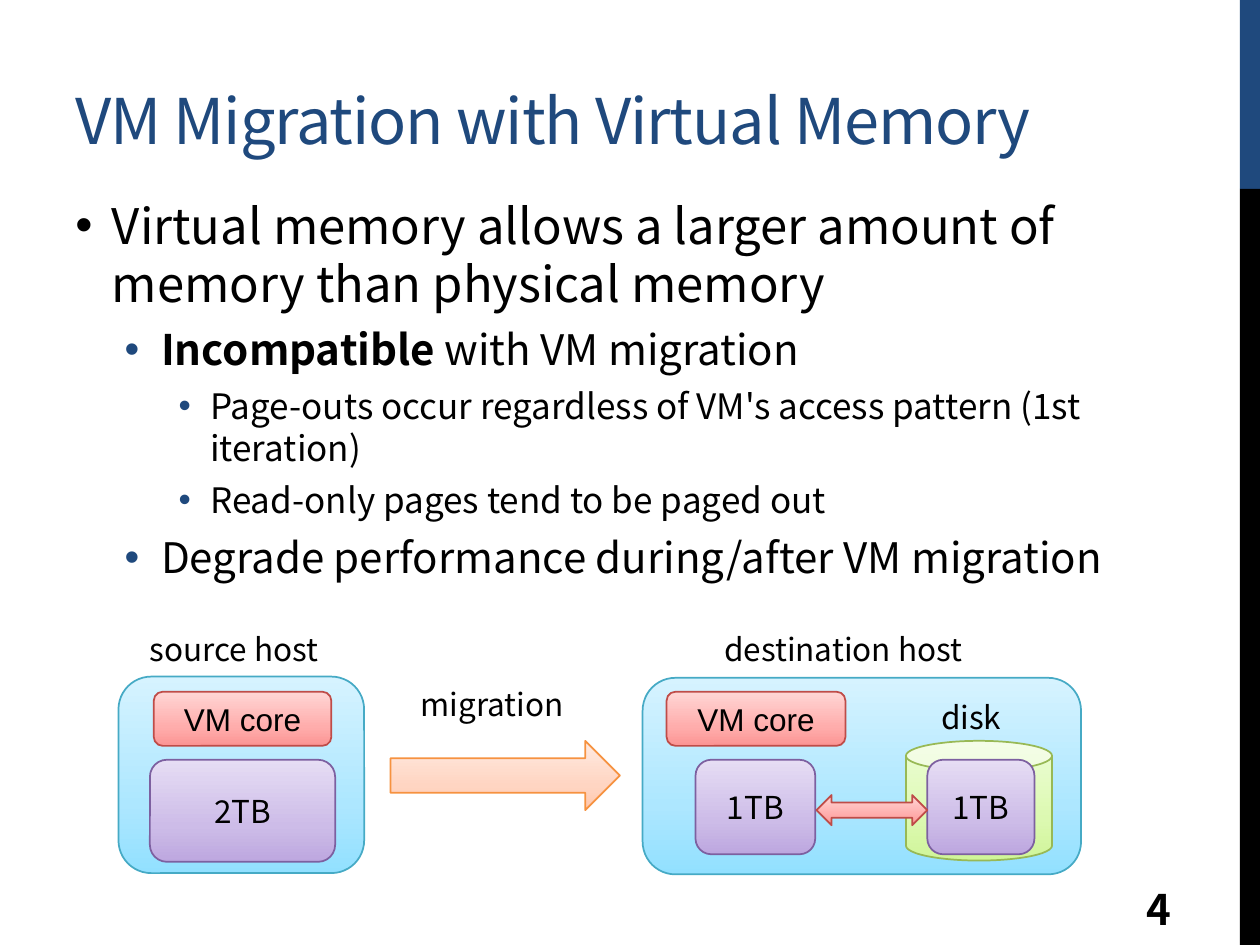
from copy import deepcopy

from pptx import Presentation
from pptx.dml.color import RGBColor
from pptx.enum.shapes import MSO_SHAPE as Shape
from pptx.enum.text import MSO_ANCHOR as Anchor, PP_ALIGN as Align
from pptx.util import Inches, Pt
from lxml.etree import SubElement
from pptx.oxml.ns import qn

# Content: (level, runs), each run being (text, bold)
TITLE = "VM Migration with Virtual Memory"
PAGE_NUMBER = "4"
BULLETS = [
    (0, [("Virtual memory allows a larger amount of memory than physical memory", False)]),
    (1, [("Incompatible", True), (" with VM migration", False)]),
    (2, [("Page-outs occur regardless of VM's access pattern (1st iteration)", False)]),
    (2, [("Read-only pages tend to be paged out", False)]),
    (1, [("Degrade performance during/after VM migration", False)]),
]

# Grid: 100 columns by 75 rows; boxes are (column, row, columns, rows)
SLIDE_WIDTH, SLIDE_HEIGHT = Inches(10), Inches(7.5)
COLUMNS, ROWS = 100, 75
STRIPES = [("navy", 0, 15), ("black", 15, 60)]
TITLE_BOX = (5, 3.6, 89.1, 9.4)
BODY_BOX = (5, 15, 89.1, 52)
NUMBER_BOX = (90, 70.1, 8.5, 4)
CORE_ROW, CORE_ROWS = 54.9, 4.3
MEMORY_ROW, MEMORY_ROWS = 60.3, 7.5

# Diagram, back to front: (kind, palette, text, box)
DIAGRAM = [
    (Shape.ROUNDED_RECTANGLE, "host", "", (9.4, 53.7, 19.5, 15.6)),
    (Shape.ROUNDED_RECTANGLE, "host", "", (51, 53.8, 34.8, 15.6)),
    (Shape.RIGHT_ARROW, "migration", "", (31, 58.8, 18.2, 5.5)),
    (Shape.ROUNDED_RECTANGLE, "memory", "2TB", (11.9, MEMORY_ROW, 14.7, 8.1)),
    (Shape.ROUNDED_RECTANGLE, "memory", "1TB", (55.2, MEMORY_ROW, 9.5, MEMORY_ROWS)),
    (Shape.CAN, "disk", "", (71.9, 58.8, 11.6, 9.5)),
    (Shape.ROUNDED_RECTANGLE, "memory", "1TB", (73.6, MEMORY_ROW, 8.5, MEMORY_ROWS)),
    (Shape.ROUNDED_RECTANGLE, "core", "VM core", (12.2, CORE_ROW, 14.1, CORE_ROWS)),
    (Shape.ROUNDED_RECTANGLE, "core", "VM core", (52.9, CORE_ROW, 14.2, CORE_ROWS)),
    (Shape.LEFT_RIGHT_ARROW, "core", "", (64.8, 63.1, 8.8, 2.4)),
]
LABELS = [
    ("migration", (32.4, 53.9, 13.7, 4)),
    ("source host", (10.9, 49.5, 16.3, 4)),
    ("destination host", (56.5, 49.5, 21.7, 4)),
    ("disk", (73.7, 54.9, 6.8, 4)),
]

THEME = {
    "font": "Noto Sans CJK JP",
    "core_font": "Arial",
    "colors": {"navy": "1F497D", "black": "000000"},
    "sizes": {"title": 36, "levels": [28, 24, 20], "number": 24, "label": 18},
    "indents": [(0.29, 0.29), (0.68, 0.29), (1.07, 0.25)],  # margin, hanging
    "bullet_colors": ["black", "navy", "navy"],
    "stops": [0, 0.35, 1],
    "palettes": {  # line, then gradient from bottom to top
        "host": ("46AAC5", ["92E0FF", "ADE7FF", "D6F3FF"]),
        "migration": ("F69240", ["FFC7AC", "FFD5C2", "FFEAE1"]),
        "memory": ("7D60A0", ["BDA7DF", "CDBCE8", "E6DDF4"]),
        "disk": ("98B955", ["D0F599", "DCF9B1", "EDFDD7"]),
        "core": ("BF4C48", ["FB9493", "FFADAC", "FFD6D5"]),
    },
}


def place(box):
    column, row, columns, rows = box
    return [int(SLIDE_WIDTH * column / COLUMNS), int(SLIDE_HEIGHT * row / ROWS),
            int(SLIDE_WIDTH * columns / COLUMNS), int(SLIDE_HEIGHT * rows / ROWS)]


def add_run(paragraph, text, size, color="black", bold=False, font=THEME["font"]):
    run = paragraph.add_run()
    run.text = text
    run.font.size, run.font.bold, run.font.name = Pt(size), bold, font
    run.font.color.rgb = RGBColor.from_string(THEME["colors"][color])
    properties = run._r.get_or_add_rPr()
    SubElement(properties, qn("a:ea")).set("typeface", font)
    return run


def add_text_frame(slide, box, anchor=Anchor.TOP, wrap=True):
    frame = slide.shapes.add_textbox(*place(box)).text_frame
    frame.word_wrap, frame.vertical_anchor = wrap, anchor
    return frame


def set_bullet(paragraph, level):
    margin, hanging = THEME["indents"][level]
    properties = paragraph._p.get_or_add_pPr()
    properties.set("marL", str(Inches(margin)))
    properties.set("indent", str(-Inches(hanging)))
    color = SubElement(properties, qn("a:buClr"))
    SubElement(color, qn("a:srgbClr")).set("val", THEME["colors"][THEME["bullet_colors"][level]])
    SubElement(properties, qn("a:buFont")).set("typeface", "Arial")
    SubElement(properties, qn("a:buChar")).set("char", "•")


def fill_gradient(fill, colors):
    fill.gradient()
    fill.gradient_angle = 90
    stop_list = fill._xPr.find(qn("a:gradFill")).find(qn("a:gsLst"))
    stop_list.append(deepcopy(stop_list[0]))
    for stop, position, color in zip(fill.gradient_stops, THEME["stops"], colors):
        stop.position = position
        stop.color.rgb = RGBColor.from_string(color)


def add_diagram_shape(slide, kind, palette, text, box):
    shape = slide.shapes.add_shape(kind, *place(box))
    shape.shadow.inherit = False
    line_color, gradient = THEME["palettes"][palette]
    fill_gradient(shape.fill, gradient)
    shape.line.color.rgb = RGBColor.from_string(line_color)
    shape.line.width = Pt(1)
    if text:
        shape.text_frame.vertical_anchor = Anchor.MIDDLE
        paragraph = shape.text_frame.paragraphs[0]
        paragraph.alignment = Align.CENTER
        font = THEME["core_font"] if palette == "core" else THEME["font"]
        add_run(paragraph, text, THEME["sizes"]["label"], font=font)


def main():
    presentation = Presentation()
    presentation.slide_width, presentation.slide_height = SLIDE_WIDTH, SLIDE_HEIGHT
    slide = presentation.slides.add_slide(presentation.slide_layouts[6])
    sizes = THEME["sizes"]

    # Right-hand stripes
    for color, row, rows in STRIPES:
        stripe = slide.shapes.add_shape(Shape.RECTANGLE, *place((98.4, row, 1.6, rows)))
        stripe.shadow.inherit = False
        stripe.fill.solid()
        stripe.fill.fore_color.rgb = RGBColor.from_string(THEME["colors"][color])
        stripe.line.fill.background()

    # Title
    frame = add_text_frame(slide, TITLE_BOX, Anchor.BOTTOM)
    run = add_run(frame.paragraphs[0], TITLE, sizes["title"], "navy")
    run._r.get_or_add_rPr().set("spc", "-60")

    # Bullets
    frame = add_text_frame(slide, BODY_BOX)
    for index, (level, runs) in enumerate(BULLETS):
        paragraph = frame.add_paragraph() if index else frame.paragraphs[0]
        paragraph.level, paragraph.space_before = level, Pt(6)
        set_bullet(paragraph, level)
        for text, bold in runs:
            add_run(paragraph, text, sizes["levels"][level], bold=bold)

    # Page number
    frame = add_text_frame(slide, NUMBER_BOX, Anchor.MIDDLE)
    add_run(frame.paragraphs[0], PAGE_NUMBER, sizes["number"], bold=True)

    # Diagram and its labels
    for part in DIAGRAM:
        add_diagram_shape(slide, *part)
    for text, box in LABELS:
        frame = add_text_frame(slide, box, wrap=False)
        add_run(frame.paragraphs[0], text, sizes["label"])

    presentation.save("out.pptx")


if __name__ == "__main__":
    main()
